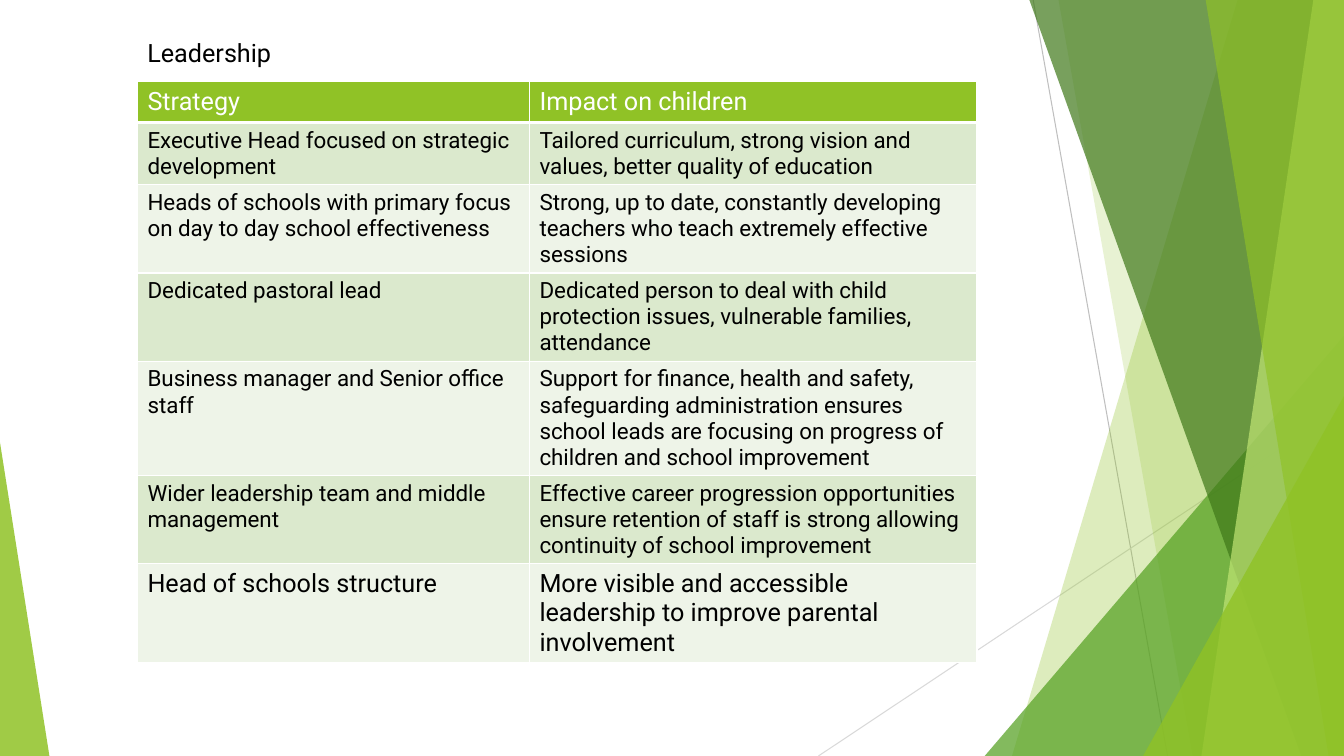
"""Build the Leadership slide: a strategy table beside overlapping green facets."""
from lxml.etree import SubElement as Sub
from pptx import Presentation
from pptx.dml.color import RGBColor
from pptx.enum.shapes import MSO_CONNECTOR as Link, MSO_SHAPE as Shape
from pptx.oxml.ns import qn
from pptx.util import Pt

WIDE, HIGH, TOP = 960, 540, -0.6
FONT = "Roboto"
BLACK, WHITE = RGBColor(0, 0, 0), RGBColor(255, 255, 255)
LIME, GREEN = RGBColor(0x90, 0xC2, 0x26), RGBColor(0x54, 0xA0, 0x21)
DARK, LIGHT = RGBColor(0x3F, 0x78, 0x19), RGBColor(0xC0, 0xE4, 0x74)
SAGE, PALE = RGBColor(0xDB, 0xE9, 0xCD), RGBColor(0xEE, 0xF4, 0xE8)
GREY, SILVER = RGBColor(0xBF, 0xBF, 0xBF), RGBColor(0xD9, 0xD9, 0xD9)

TITLE = "Leadership"
ROWS = [
    ("Strategy", "Impact on children", 18, 29.2),
    ("Executive Head focused on strategic development",
     "Tailored curriculum, strong vision and values, better quality of education", 16, 44),
    ("Heads of schools with primary focus on day to day school effectiveness",
     "Strong, up to date, constantly developing teachers who teach extremely effective sessions",
     16, 63),
    ("Dedicated pastoral lead",
     "Dedicated person to deal with child protection issues, vulnerable families, attendance",
     16, 63),
    ("Business manager and Senior office staff",
     "Support for finance, health and safety, safeguarding administration ensures school leads "
     "are focusing on progress of children and school improvement", 16, 81.6),
    ("Wider leadership team and middle management",
     "Effective career progression opportunities ensure retention of staff is strong allowing "
     "continuity of school improvement", 16, 63),
    ("Head of schools structure",
     "More visible and accessible leadership to improve parental involvement", 18, 70),
]
COLS = (280, 319.7)
LEFT = 98.2

LINES = [((738, 0), (834, HIGH), GREY), ((WIDE, 290.2), (584.6, HIGH), SILVER)]
FACETS = [
    ("band", (884.2, 722.9), LIME, 30),
    ("band", (756, 851.8), LIME, 20),
    ("wedge", (703.4, 239.8, 256.6, 1), GREEN, 72),
    ("band", (735.1, 929.5), DARK, 70),
    ("band", (938.2, 858.2), LIGHT, 70),
    ("band", (861.1, 949), LIME, 65),
    ("wedge", (816.5, 283, 143.5, 1), LIME, 80),
    ("wedge", (0, 316.1, 35.3, 0), LIME, 85),
]


def band(shapes, head, foot):
    pen = shapes.build_freeform(Pt(head), Pt(TOP), 1.0)
    ends = [(WIDE, TOP), (WIDE, HIGH), (foot, HIGH)]
    pen.add_line_segments([(Pt(x), Pt(y)) for x, y in ends], close=True)
    return pen.convert_to_shape()


def wedge(shapes, left, top, width, peak):
    shape = shapes.add_shape(Shape.ISOSCELES_TRIANGLE, Pt(left), Pt(top),
                             Pt(width), Pt(HIGH - top))
    shape.adjustments[0] = peak
    return shape


def paint(shape, color, alpha):
    shape.shadow.inherit = False
    shape.fill.solid()
    shape.fill.fore_color.rgb = color
    tint = shape.fill._xPr.find(qn("a:solidFill"))[0]
    Sub(tint, qn("a:alpha"), val=str(alpha * 1000))
    shape.line.fill.background()


def rule(shapes, start, end, color):
    line = shapes.add_connector(Link.STRAIGHT, *map(Pt, start + end))
    line.line.color.rgb = color
    line.line.width = Pt(0.75)
    Sub(line._element.spPr, qn("a:effectLst"))


def write(frame, text, size, color):
    frame.word_wrap = True
    run = frame.paragraphs[0].add_run()
    run.text = text
    run.font.name, run.font.size, run.font.bold = FONT, Pt(size), False
    run.font.color.rgb = color


def edge(cell, base):
    props = cell._tc.get_or_add_tcPr()
    for side, width in (("L", 1), ("R", 1), ("T", 1), ("B", base)):
        line = Sub(props, qn(f"a:ln{side}"), w=str(Pt(width)))
        Sub(Sub(line, qn("a:solidFill")), qn("a:srgbClr"), val=str(WHITE))


def fill_table(shapes):
    tall = sum(row[3] for row in ROWS)
    table = shapes.add_table(len(ROWS), len(COLS), Pt(LEFT), Pt(58.4),
                             Pt(sum(COLS)), Pt(tall)).table
    for col, width in zip(table.columns, COLS):
        col.width = Pt(width)
    for i, (plan, gain, size, height) in enumerate(ROWS):
        table.rows[i].height = Pt(height)
        back = (SAGE if i % 2 else PALE) if i else LIME
        for j, text in enumerate((plan, gain)):
            cell = table.cell(i, j)
            edge(cell, 1 if i else 3)
            cell.fill.solid()
            cell.fill.fore_color.rgb = back
            write(cell.text_frame, text, size, BLACK if i else WHITE)


def main():
    deck = Presentation()
    deck.slide_width, deck.slide_height = Pt(WIDE), Pt(HIGH)
    shapes = deck.slides.add_slide(deck.slide_layouts[6]).shapes
    for start, end, color in LINES:
        rule(shapes, start, end, color)
    makers = {"band": band, "wedge": wedge}
    for kind, place, color, alpha in FACETS:
        paint(makers[kind](shapes, *place), color, alpha)
    fill_table(shapes)
    box = shapes.add_textbox(Pt(LEFT), Pt(23), Pt(381.6), Pt(30.2))
    write(box.text_frame, TITLE, 18, BLACK)
    deck.save("out.pptx")


if __name__ == "__main__":
    main()
